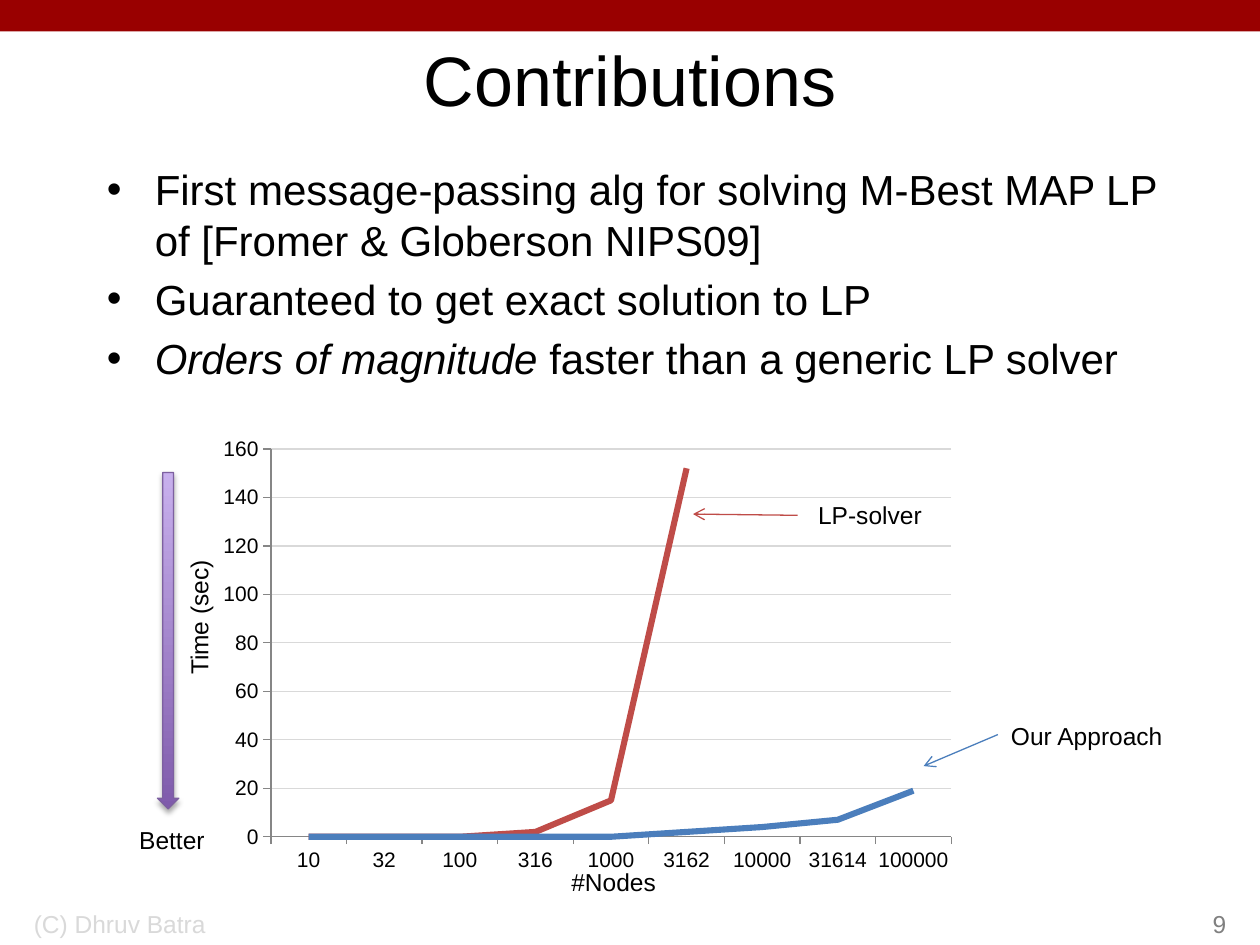
from lxml import etree
from pptx import Presentation
from pptx.chart.data import CategoryChartData
from pptx.dml.color import RGBColor
from pptx.enum.chart import XL_CHART_TYPE, XL_MARKER_STYLE, XL_TICK_MARK
from pptx.enum.shapes import MSO_CONNECTOR, MSO_SHAPE
from pptx.enum.text import MSO_ANCHOR, PP_ALIGN
from pptx.oxml import parse_xml
from pptx.oxml.ns import nsdecls, qn
from pptx.util import Inches, Pt

LEFT, CENTER, RIGHT = PP_ALIGN.LEFT, PP_ALIGN.CENTER, PP_ALIGN.RIGHT
TOP, MIDDLE, BOTTOM = MSO_ANCHOR.TOP, MSO_ANCHOR.MIDDLE, MSO_ANCHOR.BOTTOM
TICK_OUT = XL_TICK_MARK.OUTSIDE

FONT = "Arial"
BLACK = RGBColor(0x00, 0x00, 0x00)
BANNER_RED = RGBColor(0x99, 0x00, 0x00)
FOOTER_GRAY = RGBColor(0xD9, 0xD9, 0xD9)
NUMBER_GRAY = RGBColor(0x80, 0x80, 0x80)
GRID_GRAY = RGBColor(0xD9, 0xD9, 0xD9)
AXIS_GRAY = RGBColor(0x86, 0x86, 0x86)
SOLVER_RED = RGBColor(0xBF, 0x4C, 0x48)
APPROACH_BLUE = RGBColor(0x4B, 0x7E, 0xBC)
PURPLE_DARK = RGBColor(0x7F, 0x5B, 0xAB)
PURPLE_LIGHT = RGBColor(0xC8, 0xB0, 0xED)
PURPLE_EDGE = RGBColor(0x7D, 0x60, 0xA0)

# Content: bullets are lists of (text, italic) runs
TITLE = "Contributions"
BULLETS = [
    [("First message-passing alg for solving M-Best MAP LP "
      "of [Fromer & Globerson NIPS09]", False)],
    [("Guaranteed to get exact solution to LP", False)],
    [("Orders of magnitude", True), (" faster than a generic LP solver", False)],
]
NODE_COUNTS = ["10", "32", "100", "316", "1000", "3162", "10000", "31614", "100000"]
RUNTIMES = [
    ("Series 1", [0, 0, 0, 2, 15, 152, None, None, None], SOLVER_RED),
    ("Series 2", [0, 0, 0, 0, 0, 2, 4, 7, 19], APPROACH_BLUE),
]
# text, (left, top, width, height), rotation
LABELS = [
    ("LP-solver", (6.39, 3.92, 1.03, 0.34), 0),
    ("Our Approach", (7.92, 5.67, 1.41, 0.34), 0),
    ("#Nodes", (4.43, 6.83, 0.88, 0.34), 0),
    ("Time (sec)", (1.02, 4.73, 1.12, 0.34), 270),
    ("Better", (1, 6.5, 0.73, 0.34), 0),
]
# from, to, colour
POINTERS = [
    ((6.33, 4.09), (5.5, 4.08), SOLVER_RED),
    ((7.92, 5.83), (7.33, 6.08), APPROACH_BLUE),
]
CHART_BOX = (1.67, 3.42, 6, 3.58)
PLOT_BOX = {"x": 0.08, "y": 0.04, "w": 0.9, "h": 0.86}  # shares of the chart


def inches(values):
    return [Inches(value) for value in values]


def style_font(font, size, color=BLACK):
    font.name, font.size = FONT, Pt(size)
    font.color.rgb = color


def add_text(slide, box, paragraphs, size, color=BLACK, align=LEFT, anchor=TOP, wrap=True):
    holder = slide.shapes.add_textbox(*inches(box))
    frame = holder.text_frame
    frame.word_wrap, frame.vertical_anchor = wrap, anchor
    for index, runs in enumerate(paragraphs):
        paragraph = frame.add_paragraph() if index else frame.paragraphs[0]
        paragraph.alignment = align
        for text, italic in runs:
            run = paragraph.add_run()
            run.text = text
            style_font(run.font, size, color)
            run.font.italic = italic
    return holder


def add_bullets(slide):
    body = add_text(slide, (0.75, 1.25, 8.75, 5.75), BULLETS, 24)
    for paragraph in body.text_frame.paragraphs:
        paragraph.space_before = Pt(5)
        properties = paragraph._p.get_or_add_pPr()
        properties.set("marL", str(Inches(0.38)))
        properties.set("indent", str(-Inches(0.38)))
        etree.SubElement(properties, qn("a:buFont")).set("typeface", FONT)
        etree.SubElement(properties, qn("a:buChar")).set("char", "•")


def add_runtime_chart(slide):
    data = CategoryChartData()
    data.categories = NODE_COUNTS
    for name, seconds, _ in RUNTIMES:
        data.add_series(name, seconds)
    chart = slide.shapes.add_chart(XL_CHART_TYPE.LINE, *inches(CHART_BOX), data).chart
    chart.has_legend = chart.has_title = False
    style_font(chart.font, 12)

    plot = chart.plots[0]
    plot.vary_by_categories = False
    for series, (_, _, color) in zip(plot.series, RUNTIMES):
        series.smooth = False
        series.marker.style = XL_MARKER_STYLE.NONE
        series.format.line.color.rgb = color
        series.format.line.width = Pt(3.5)

    for axis in (chart.category_axis, chart.value_axis):
        axis.major_tick_mark = TICK_OUT
        axis.format.line.color.rgb = AXIS_GRAY
        axis.format.line.width = Pt(0.75)
        style_font(axis.tick_labels.font, 12)
    seconds_axis = chart.value_axis
    seconds_axis.minimum_scale, seconds_axis.maximum_scale = 0, 160
    seconds_axis.major_unit = 20
    seconds_axis.major_gridlines.format.line.color.rgb = GRID_GRAY
    seconds_axis.major_gridlines.format.line.width = Pt(0.75)

    # Fixed inner plot area
    plot_area = chart._chartSpace.chart.plotArea
    for old_layout in plot_area.findall(qn("c:layout")):
        plot_area.remove(old_layout)
    modes = "".join(f'<c:{side}Mode val="edge"/>' for side in "xy")
    shares = "".join(f'<c:{side} val="{share}"/>' for side, share in PLOT_BOX.items())
    plot_area.insert(0, parse_xml(
        f'<c:layout {nsdecls("c")}><c:manualLayout><c:layoutTarget val="inner"/>'
        f'{modes}{shares}</c:manualLayout></c:layout>'))


def add_pointer(slide, start, end, color):
    pointer = slide.shapes.add_connector(MSO_CONNECTOR.STRAIGHT, *inches(start + end))
    pointer.line.color.rgb = color
    pointer.line.width = Pt(0.75)
    etree.SubElement(pointer.line._get_or_add_ln(), qn("a:tailEnd")).set("type", "arrow")
    etree.SubElement(pointer._element.spPr, qn("a:effectLst"))


def add_better_arrow(slide):
    arrow = slide.shapes.add_shape(MSO_SHAPE.DOWN_ARROW, *inches((1.25, 3.75, 0.17, 2.67)))
    arrow.fill.gradient()
    arrow.fill.gradient_angle = 90
    for stop, color in zip(arrow.fill.gradient_stops, (PURPLE_DARK, PURPLE_LIGHT)):
        stop.color.rgb = color
    arrow.line.color.rgb = PURPLE_EDGE
    arrow.line.width = Pt(0.75)
    arrow.shadow.inherit = False
    effects = arrow._element.spPr.find(qn("a:effectLst"))
    effects.append(parse_xml(
        f'<a:outerShdw {nsdecls("a")} blurRad="{Pt(3.1)}" dist="{Pt(1.8)}" dir="5400000" '
        'rotWithShape="0"><a:srgbClr val="000000"><a:alpha val="35000"/></a:srgbClr>'
        '</a:outerShdw>'))


def main():
    deck = Presentation()
    deck.slide_width, deck.slide_height = Inches(10), Inches(7.5)
    slide = deck.slides.add_slide(deck.slide_layouts[6])

    # Banner, title and bullets
    banner = slide.shapes.add_shape(MSO_SHAPE.RECTANGLE, *inches((0, 0, 10, 0.25)))
    banner.shadow.inherit = False
    banner.fill.solid()
    banner.fill.fore_color.rgb = BANNER_RED
    banner.line.fill.background()
    add_text(slide, (0.75, 0.25, 8.5, 0.75), [[(TITLE, False)]], 40,
             align=CENTER, anchor=MIDDLE)
    add_bullets(slide)

    # Footer
    add_text(slide, (0.17, 7, 3.17, 0.5), [[("(C) Dhruv Batra", False)]], 14,
             FOOTER_GRAY, anchor=BOTTOM)
    add_text(slide, (7.75, 7, 2.08, 0.5), [[("9", False)]], 14,
             NUMBER_GRAY, RIGHT, BOTTOM)

    # Chart with its labels and arrows
    add_runtime_chart(slide)
    for text, box, rotation in LABELS:
        label = add_text(slide, box, [[(text, False)]], 14, align=CENTER, wrap=False)
        label.rotation = rotation
    for start, end, color in POINTERS:
        add_pointer(slide, start, end, color)
    add_better_arrow(slide)

    deck.save("out.pptx")


if __name__ == "__main__":
    main()
